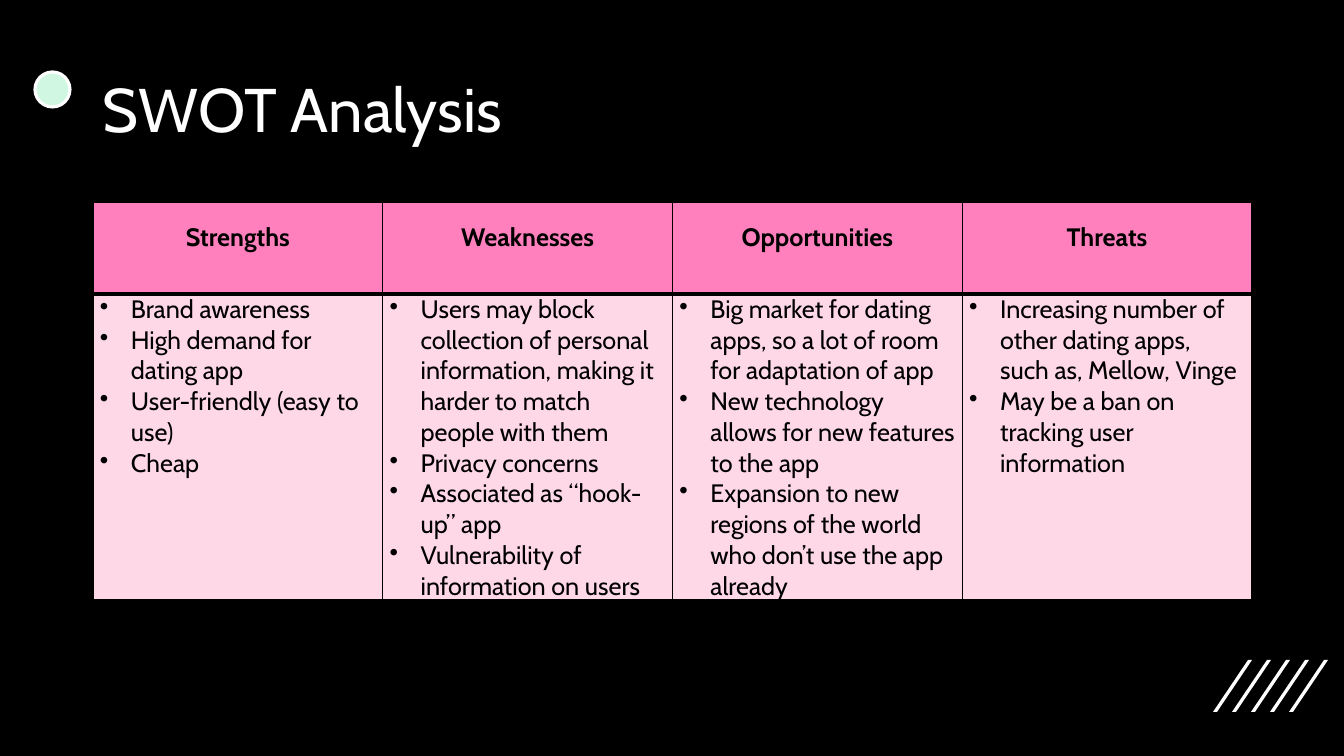
import pptx
import pptx.dml.color
import pptx.enum.shapes
import pptx.enum.text
import pptx.oxml
import pptx.oxml.ns
import pptx.util

PX = 914400 / 100.8  # EMU in one px
FONT = "Cabin"
BLACK, WHITE, MINT = "000000", "FFFFFF", "CFF7E1"
HEADER_PINK, BODY_PINK = "FF80BD", "FFD8E8"

SWOT = {
    "Strengths": [
        "Brand awareness",
        "High demand for dating app",
        "User-friendly (easy to use)",
        "Cheap",
    ],
    "Weaknesses": [
        "Users may block collection of personal information, making it "
        "harder to match people with them",
        "Privacy concerns",
        "Associated as “hook-up” app",
        "Vulnerability of information on users",
    ],
    "Opportunities": [
        "Big market for dating apps, so a lot of room for adaptation of app",
        "New technology allows for new features to the app",
        "Expansion to new regions of the world who don’t use the app already",
    ],
    "Threats": [
        "Increasing number of other dating apps, such as, Mellow, Vinge",
        "May be a ban on tracking user information",
    ],
}


def px(length):
    return pptx.util.Emu(round(length * PX))


def color(hex_string):
    return pptx.dml.color.RGBColor.from_string(hex_string)


def set_fill(target, hex_string):
    target.fill.solid()
    target.fill.fore_color.rgb = color(hex_string)


def set_font(paragraph, size, hex_string, bold=False):
    paragraph.font.name = FONT
    paragraph.font.size = pptx.util.Pt(size)
    paragraph.font.bold = bold
    paragraph.font.color.rgb = color(hex_string)


def add_slashes(slide, left, top, count, pitch):
    for index in range(count):
        x = left + index * pitch
        builder = slide.shapes.build_freeform(x + 4, top + 52, scale=PX)
        builder.add_line_segments([(x, top + 52), (x + 35, top), (x + 39, top)])
        slash = builder.convert_to_shape()
        slash.shadow.inherit = False
        set_fill(slash, WHITE)
        slash.line.fill.background()


def add_dot(slide, left, top, size):
    dot = slide.shapes.add_shape(
        pptx.enum.shapes.MSO_SHAPE.OVAL, px(left), px(top), px(size), px(size))
    dot.shadow.inherit = False
    set_fill(dot, MINT)
    dot.line.color.rgb = color(WHITE)
    dot.line.width = pptx.util.Pt(2.25)


def add_title(slide, text, left, top, width, height):
    box = slide.shapes.add_textbox(px(left), px(top), px(width), px(height))
    frame = box.text_frame
    frame.word_wrap = True
    frame.vertical_anchor = pptx.enum.text.MSO_ANCHOR.MIDDLE
    paragraph = frame.paragraphs[0]
    paragraph.text = text
    paragraph.line_spacing = 0.9
    set_font(paragraph, 44, WHITE)


def set_borders(cell, bottom_points):
    properties = cell._tc.get_or_add_tcPr()
    widths = {"lnL": 1, "lnR": 1, "lnT": 1, "lnB": bottom_points}
    for index, (tag, points) in enumerate(widths.items()):
        properties.insert(index, pptx.oxml.parse_xml(
            f'<a:{tag} {pptx.oxml.ns.nsdecls("a")} w="{pptx.util.Pt(points)}">'
            f'<a:solidFill><a:srgbClr val="{BLACK}"/></a:solidFill></a:{tag}>'))


def add_bullet(paragraph, indent):
    properties = paragraph._p.get_or_add_pPr()
    properties.set("marL", str(px(indent)))
    properties.set("indent", str(-px(indent)))
    properties.append(pptx.oxml.parse_xml(
        f'<a:buChar {pptx.oxml.ns.nsdecls("a")} char="•"/>'))


def style_cell(cell, fill, margin_top, bottom_points):
    set_fill(cell, fill)
    cell.margin_left = cell.margin_right = px(7)
    cell.margin_top, cell.margin_bottom = px(margin_top), 0
    set_borders(cell, bottom_points)


def add_swot_table(slide, left, top, width, row_heights):
    count = len(SWOT)
    table = slide.shapes.add_table(
        2, count, px(left), px(top), px(width), px(sum(row_heights))).table
    for row, height in zip(table.rows, row_heights):
        row.height = px(height)
    for index, (heading, points) in enumerate(SWOT.items()):
        table.columns[index].width = px(width / count)

        header = table.cell(0, index)
        style_cell(header, HEADER_PINK, 20, 3)
        paragraph = header.text_frame.paragraphs[0]
        paragraph.text = heading
        paragraph.alignment = pptx.enum.text.PP_ALIGN.CENTER
        set_font(paragraph, 18, BLACK, bold=True)

        body = table.cell(1, index)
        style_cell(body, BODY_PINK, 0, 1)
        body.text_frame.text = "\n".join(points)
        for paragraph in body.text_frame.paragraphs:
            set_font(paragraph, 18, BLACK)
            add_bullet(paragraph, 31)


def main():
    presentation = pptx.Presentation()
    presentation.slide_width, presentation.slide_height = px(1344), px(756)
    slide = presentation.slides.add_slide(presentation.slide_layouts[6])
    set_fill(slide.background, BLACK)

    # Decoration
    add_slashes(slide, left=1213, top=660, count=5, pitch=19)
    add_dot(slide, left=35, top=72, size=35)

    # Content
    add_title(slide, "SWOT Analysis", 93, 40, 1159, 146)
    add_swot_table(slide, 93, 202, 1159, row_heights=[92, 306])

    presentation.save("out.pptx")


if __name__ == "__main__":
    main()
